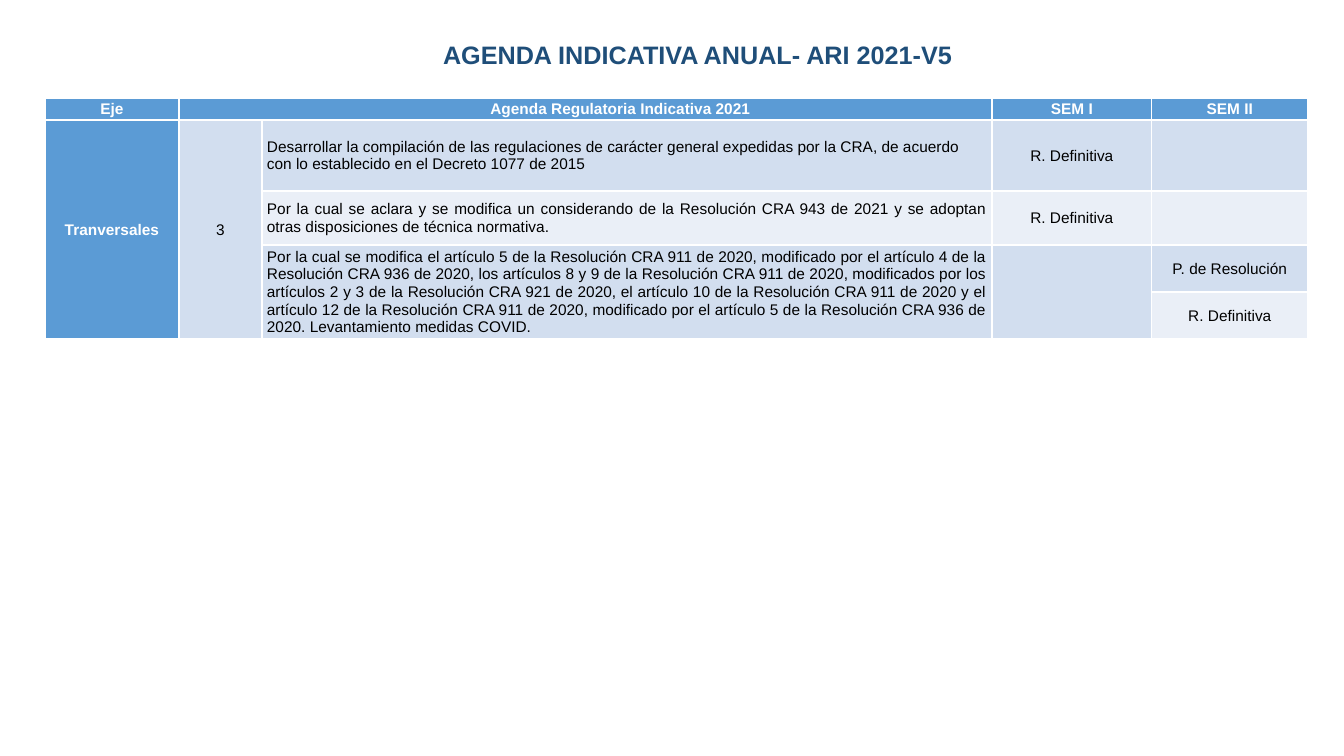
import pptx
import pptx.util
import pptx.dml.color
import pptx.enum.text

ALIGN = pptx.enum.text.PP_ALIGN
MIDDLE = pptx.enum.text.MSO_ANCHOR.MIDDLE
BLUE, PALE, LIGHT = "5B9BD5", "D2DEEF", "EAEFF7"
WHITE, BLACK, NAVY = "FFFFFF", "000000", "1F4E79"

COLS = [134, 83, 730, 160, 156]
ROWS = [22, 71, 54, 47, 47]
SPANS = [(0, 1, 0, 2), (1, 0, 4, 0), (1, 1, 4, 1), (3, 2, 4, 2), (3, 3, 4, 3)]
TEXTS = [
    ["Eje", "Agenda Regulatoria Indicativa 2021", "", "SEM I", "SEM II"],
    ["Tranversales", "3",
     "Desarrollar la compilación de las regulaciones de carácter general "
     "expedidas por la CRA, de acuerdo con lo establecido en el Decreto 1077 de 2015",
     "R. Definitiva", ""],
    ["", "",
     "Por la cual se aclara y se modifica un considerando de la Resolución CRA 943 "
     "de 2021 y se adoptan otras disposiciones de técnica normativa.",
     "R. Definitiva", ""],
    ["", "",
     "Por la cual se modifica el artículo 5 de la Resolución CRA 911 de 2020, "
     "modificado por el artículo 4 de la Resolución CRA 936 de 2020, los artículos "
     "8 y 9 de la Resolución CRA 911 de 2020, modificados por los artículos 2 y 3 "
     "de la Resolución CRA 921 de 2020, el artículo 10 de la Resolución CRA 911 de "
     "2020 y el artículo 12 de la Resolución CRA 911 de 2020, modificado por el "
     "artículo 5 de la Resolución CRA 936 de 2020. Levantamiento medidas COVID.",
     "", "P. de Resolución"],
    ["", "", "", "", "R. Definitiva"],
]


def px(n):
    return pptx.util.Emu(round(n * 914400 / 100.8))


def color(code):
    return pptx.dml.color.RGBColor.from_string(code)


class Page:
    face = "Arial"

    def __init__(self, deck):
        self.slide = deck.slides.add_slide(deck.slide_layouts[5])

    def style(self, para, size, code, bold, align):
        para.alignment = align
        for run in para.runs:
            run.font.name = self.face
            run.font.size = pptx.util.Pt(size)
            run.font.bold = bold
            run.font.color.rgb = color(code)

    def title(self, text, x, y, w, h):
        box = self.slide.shapes.title
        box.left, box.top, box.width, box.height = map(px, (x, y, w, h))
        frame = box.text_frame
        frame.text = text
        frame.auto_size = pptx.enum.text.MSO_AUTO_SIZE.NONE
        frame.vertical_anchor = MIDDLE
        self.style(frame.paragraphs[0], 18, NAVY, True, ALIGN.LEFT)

    def cell(self, cell, text, fill, code, bold, align, side):
        cell.fill.solid()
        cell.fill.fore_color.rgb = color(fill)
        cell.vertical_anchor = MIDDLE
        cell.margin_left = cell.margin_right = px(side)
        cell.margin_top = cell.margin_bottom = 0
        cell.text_frame.text = text
        para = cell.text_frame.paragraphs[0]
        para.line_spacing = 1.03
        para.space_after = pptx.util.Pt(0.2)
        self.style(para, 11, code, bold, align)
        return para

    def table(self, x, y):
        shape = self.slide.shapes.add_table(
            len(ROWS), len(COLS), px(x), px(y), px(sum(COLS)), px(sum(ROWS)))
        grid = shape.table
        for col, width in zip(grid.columns, COLS):
            col.width = px(width)
        for row, height in zip(grid.rows, ROWS):
            row.height = px(height)
        for r, line in enumerate(TEXTS):
            for c, text in enumerate(line):
                head = r == 0 or c == 0
                fill = BLUE if head else PALE if r % 2 or c == 1 else LIGHT
                align = ALIGN.CENTER
                if c == 2:
                    align = ALIGN.LEFT if r == 1 else ALIGN.JUSTIFY
                para = self.cell(grid.cell(r, c), text, fill,
                                 WHITE if head else BLACK, head, align,
                                 1 if head or c == 1 else 5)
                if (r, c) == (0, 1):
                    para._p.get_or_add_pPr().set("marL", str(px(70)))
        for top, left, bottom, right in SPANS:
            grid.cell(top, left).merge(grid.cell(bottom, right))


def main():
    deck = pptx.Presentation()
    deck.slide_width, deck.slide_height = px(1344), px(756)
    page = Page(deck)
    page.title("AGENDA INDICATIVA ANUAL- ARI 2021-V5", 433, 34, 846, 40)
    page.table(45, 98)
    deck.save("out.pptx")


if __name__ == "__main__":
    main()
